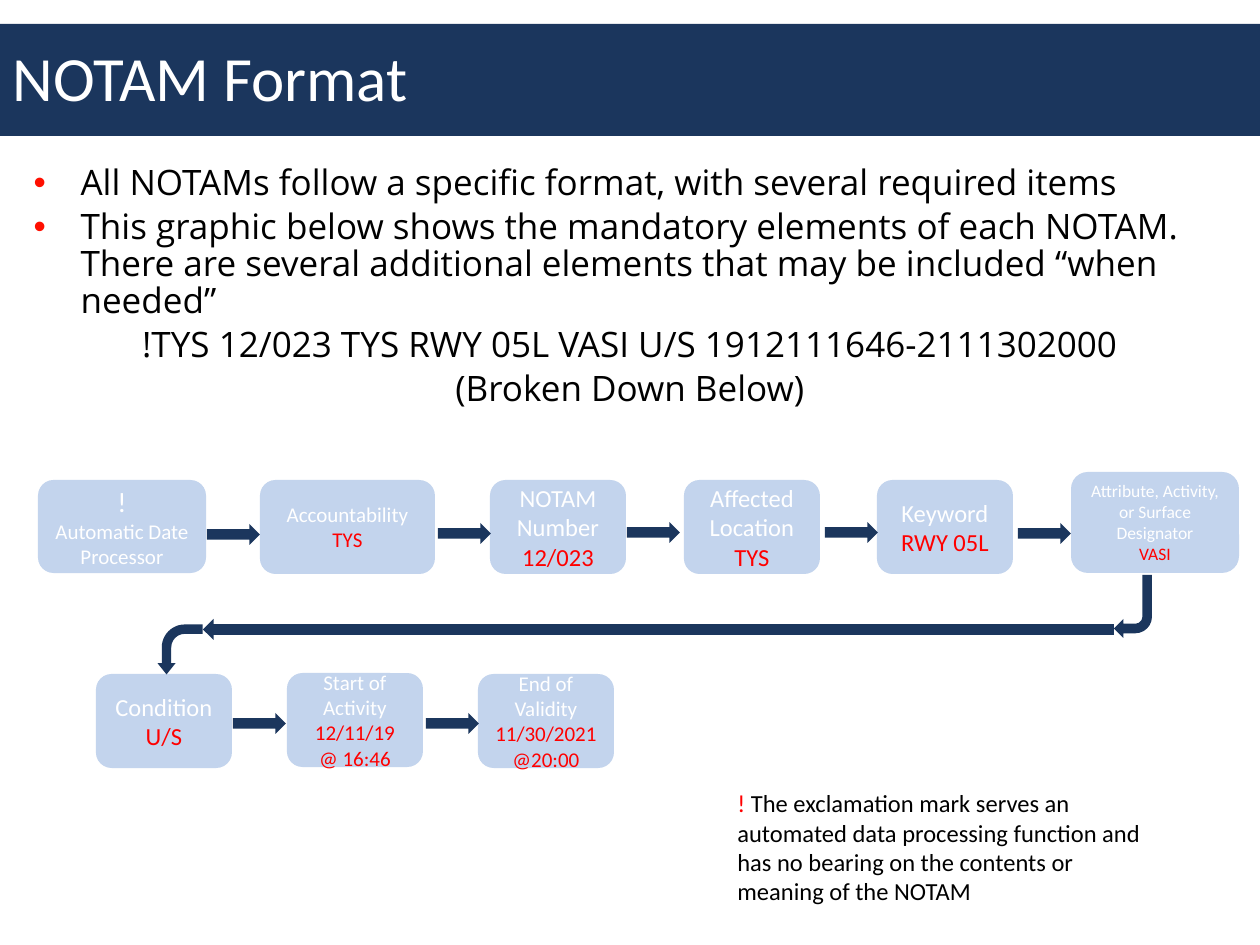
from dataclasses import dataclass

import pptx
import pptx.dml.color
import pptx.enum.shapes
import pptx.enum.text
import pptx.oxml
import pptx.oxml.ns
import pptx.util

EMU_PER_PX = 914400 // 126
COLOURS = {"navy": "1B365D", "pale": "C3D4ED", "red": "FF0000",
           "bullet": "FF0F00", "white": "FFFFFF", "black": "000000"}
SHAPES = pptx.enum.shapes.MSO_SHAPE
ALIGN = pptx.enum.text.PP_ALIGN
ANCHOR = pptx.enum.text.MSO_ANCHOR
NO_FIT = pptx.enum.text.MSO_AUTO_SIZE.NONE


@dataclass
class Span:
    text: str
    size: int
    colour: str
    font: str = "Calibri"


@dataclass
class Step:
    left: int
    label: str
    value: str
    size: int = 14
    top: int = 480
    width: int = 136
    height: int = 94


@dataclass
class Arrow:
    left: int
    top: int
    width: int = 53
    height: int = 21
    kind: SHAPES = SHAPES.RIGHT_ARROW
    rotation: int = 0


STEPS = [
    Step(260, "Accountability", "TYS", 12, width=175),
    Step(490, "NOTAM Number", "12/023"),
    Step(684, "Affected Location", "TYS"),
    Step(877, "Keyword", "RWY 05L"),
    Step(1071, "Attribute, Activity, or Surface Designator", "VASI", 10,
         top=472, width=168, height=101),
    Step(96, "Condition", "U/S", top=674),
    Step(287, "Start of Activity", "12/11/19 @ 16:46", 12, top=673),
    Step(478, "End of Validity", "11/30/2021 @20:00", 12, top=674),
]
ARROWS = [
    Arrow(207, 524), Arrow(438, 523), Arrow(627, 522), Arrow(825, 522),
    Arrow(1018, 523), Arrow(233, 713), Arrow(426, 713),
    Arrow(203, 619, width=911, rotation=180),
    Arrow(1114, 575, 38, 63, SHAPES.BENT_ARROW, 180),
]
BULLETS = [
    "All NOTAMs follow a specific format, with several required items",
    "This graphic below shows the mandatory elements of each NOTAM. There are "
    "several additional elements that may be included “when needed”",
]
EXAMPLE = ["!TYS 12/023 TYS RWY 05L VASI U/S 1912111646-2111302000",
           "(Broken Down Below)"]


def px(*lengths: int) -> list[int]:
    return [length * EMU_PER_PX for length in lengths]


def rgb(name: str) -> pptx.dml.color.RGBColor:
    return pptx.dml.color.RGBColor.from_string(COLOURS[name])


def set_format(target, values: dict) -> None:
    for name, value in values.items():
        setattr(target, name, value)


def place(shape, left: int, top: int, width: int, height: int) -> None:
    set_format(shape, dict(zip(("left", "top", "width", "height"),
                               px(left, top, width, height))))


def add_span(para, span: Span) -> None:
    run = para.add_run()
    run.text = span.text
    set_format(run.font, {"name": span.font, "size": pptx.util.Pt(span.size)})
    run.font.color.rgb = rgb(span.colour)


def add_solid(page, kind: SHAPES, frame: tuple, colour: str):
    """Add a flat filled shape without outline or shadow."""
    shape = page.shapes.add_shape(kind, *px(*frame))
    shape.shadow.inherit = False
    shape.fill.solid()
    shape.fill.fore_color.rgb = rgb(colour)
    shape.line.fill.background()
    return shape


def set_bullet(para, indent: int, mark: str = "") -> None:
    """Give the paragraph a hanging bullet, or remove it if mark is empty."""
    properties = para._p.get_or_add_pPr()
    set_format(properties, {})
    properties.set("marL", str(indent * EMU_PER_PX))
    properties.set("indent", str(-indent * EMU_PER_PX))
    namespace = pptx.oxml.ns.nsdecls("a")
    parts = [f"<a:buNone {namespace}/>"]
    if mark:
        parts = [f'<a:buClr {namespace}><a:srgbClr val="{COLOURS["bullet"]}"/></a:buClr>',
                 f'<a:buFont {namespace} typeface="Arial"/>',
                 f'<a:buChar {namespace} char="{mark}"/>']
    for part in parts:
        properties.append(pptx.oxml.parse_xml(part))


def add_header(page) -> None:
    title = page.shapes.title
    place(title, 0, 32, 788, 89)
    bar = add_solid(page, SHAPES.RECTANGLE, (0, 24, 1260, 112), "navy")
    title.element.addprevious(bar.element)
    set_format(title.text_frame, {"auto_size": NO_FIT, "vertical_anchor": ANCHOR.MIDDLE})
    para = title.text_frame.paragraphs[0]
    para.alignment = ALIGN.LEFT
    add_span(para, Span("NOTAM Format", 36, "white"))


def add_body(page) -> None:
    body = page.placeholders[1]
    place(body, 21, 160, 1218, 766)
    frame = body.text_frame
    set_format(frame, {"auto_size": NO_FIT, "vertical_anchor": ANCHOR.TOP})
    for index, text in enumerate(BULLETS + EXAMPLE):
        para = frame.add_paragraph() if index else frame.paragraphs[0]
        is_bullet = text in BULLETS
        set_bullet(para, 47 if is_bullet else 0, "•" if is_bullet else "")
        set_format(para, {"alignment": ALIGN.LEFT if is_bullet else ALIGN.CENTER,
                          "line_spacing": 0.88,
                          "space_before": pptx.util.Pt(4 if index else 0)})
        add_span(para, Span(text, 20, "black", "Open Sans"))


def add_box(page, frame: tuple, spans: list[Span]) -> None:
    """Add a rounded box with one centred paragraph per span."""
    box = add_solid(page, SHAPES.ROUNDED_RECTANGLE, frame, "pale")
    text = box.text_frame
    set_format(text, {"word_wrap": True, "vertical_anchor": ANCHOR.MIDDLE})
    for index, span in enumerate(spans):
        para = text.add_paragraph() if index else text.paragraphs[0]
        para.alignment = ALIGN.CENTER
        add_span(para, span)


def add_arrow(page, arrow: Arrow):
    frame = (arrow.left, arrow.top, arrow.width, arrow.height)
    shape = add_solid(page, arrow.kind, frame, "navy")
    shape.rotation = arrow.rotation
    return shape


def add_flow(page) -> None:
    add_box(page, (38, 480, 168, 93),
            [Span("!", 16, "white"), Span("Automatic Date Processor", 12, "white")])
    for step in STEPS:
        add_box(page, (step.left, step.top, step.width, step.height),
                [Span(step.label, step.size, "white"), Span(step.value, step.size, "red")])
    for arrow in ARROWS:
        add_arrow(page, arrow)
    turn = add_arrow(page, Arrow(155, 627, 50, 45, SHAPES.BENT_ARROW, 270))
    turn.element.spPr.xfrm.set("flipH", "1")
    for index, value in enumerate((0.21, 0.2, 0.25, 0.51)):
        turn.adjustments[index] = value


def add_note(page) -> None:
    note = page.shapes.add_textbox(*px(725, 782, 441, 131))
    note.text_frame.word_wrap = True
    para = note.text_frame.paragraphs[0]
    add_span(para, Span("!", 14, "red"))
    add_span(para, Span(" The exclamation mark serves an automated data processing function "
                        "and has no bearing on the contents or meaning of the NOTAM",
                        14, "black"))


def main() -> None:
    deck = pptx.Presentation()
    set_format(deck, dict(zip(("slide_width", "slide_height"), px(1260, 945))))
    page = deck.slides.add_slide(deck.slide_layouts[1])
    add_header(page)
    add_body(page)
    add_note(page)
    add_flow(page)
    deck.save("out.pptx")


if __name__ == "__main__":
    main()
